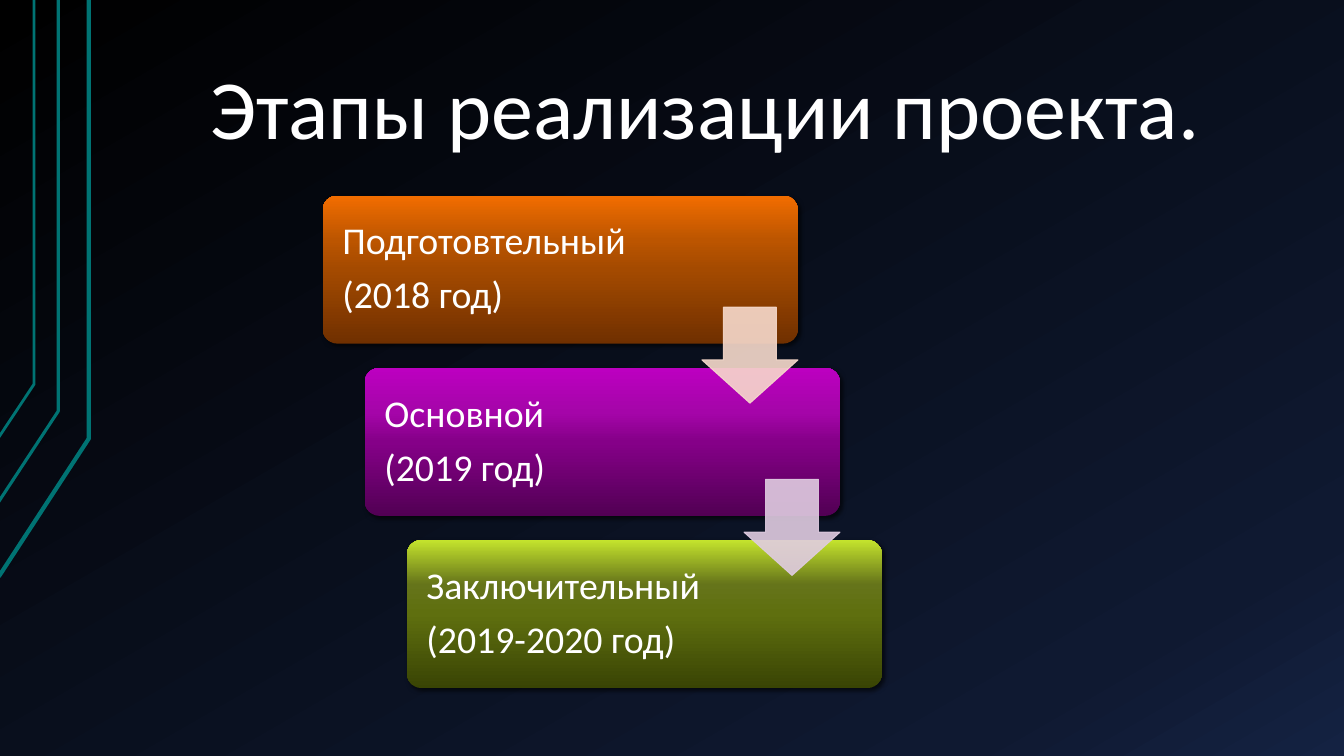
import pptx
import pptx.util
import pptx.dml.color
import pptx.enum.shapes
import pptx.enum.text
import pptx.oxml
import pptx.oxml.ns
from pptx.util import Cm

SHAPES = pptx.enum.shapes.MSO_SHAPE
ALIGN = pptx.enum.text.PP_ALIGN
ANCHOR = pptx.enum.text.MSO_ANCHOR
NAMESPACE = pptx.oxml.ns.nsdecls("a")
qn = pptx.oxml.ns.qn


def colour(code):
    return pptx.dml.color.RGBColor.from_string(code)


class StageSlide:
    font = "Calibri"
    text_colour = "FFFFFF"
    trace_colour = "007373"

    def __init__(self, slide):
        self.slide = slide

    def gradient(self, fill, owner, stops, angle):
        fill.gradient()
        fill.gradient_angle = angle
        stop_list = owner.find(".//" + qn("a:gsLst"))
        for stop in list(stop_list):
            stop_list.remove(stop)
        for position, code in stops:
            stop_list.append(pptx.oxml.parse_xml(
                f'<a:gs {NAMESPACE} pos="{position * 1000}">'
                f'<a:srgbClr val="{code}"/></a:gs>'))

    def background(self, stops, angle):
        self.gradient(self.slide.background.fill, self.slide.element, stops, angle)

    def style_text(self, paragraph, size, align):
        paragraph.alignment = align
        paragraph.line_spacing = 0.9
        paragraph.font.size = pptx.util.Pt(size)
        paragraph.font.name = self.font
        paragraph.font.color.rgb = colour(self.text_colour)

    def title(self, text, left, top, width, height):
        heading = self.slide.shapes.title
        heading.left, heading.top = Cm(left), Cm(top)
        heading.width, heading.height = Cm(width), Cm(height)
        frame = heading.text_frame
        frame.text = text
        frame.word_wrap = True
        frame.auto_size = pptx.enum.text.MSO_AUTO_SIZE.NONE
        frame.vertical_anchor = ANCHOR.BOTTOM
        frame.margin_left = frame.margin_right = Cm(0.33)
        frame.margin_top = frame.margin_bottom = Cm(0.18)
        self.style_text(frame.paragraphs[0], 60, ALIGN.CENTER)

    def trace(self, points, width):
        start, *rest = [(Cm(x), Cm(y)) for x, y in points]
        builder = self.slide.shapes.build_freeform(*start)
        builder.add_line_segments(rest, close=False)
        trace = builder.convert_to_shape()
        trace.shadow.inherit = False
        trace.fill.background()
        trace.line.color.rgb = colour(self.trace_colour)
        trace.line.width = pptx.util.Pt(width)

    def card(self, lines, stops, left, top, width, height):
        card = self.slide.shapes.add_shape(
            SHAPES.ROUNDED_RECTANGLE, Cm(left), Cm(top), Cm(width), Cm(height))
        card.adjustments[0] = 0.1
        self.gradient(card.fill, card.element, stops, 90)
        card.line.fill.background()
        card.shadow.inherit = False
        card.element.spPr.find(qn("a:effectLst")).append(pptx.oxml.parse_xml(
            f'<a:outerShdw {NAMESPACE} blurRad="38100" dist="25400" dir="2700000">'
            '<a:srgbClr val="000000"><a:alpha val="60000"/></a:srgbClr></a:outerShdw>'))
        frame = card.text_frame
        frame.text = "\n".join(lines)
        frame.word_wrap = True
        frame.vertical_anchor = ANCHOR.MIDDLE
        frame.margin_left = frame.margin_right = Cm(0.39)
        for paragraph in frame.paragraphs:
            self.style_text(paragraph, 27, ALIGN.LEFT)
            paragraph.space_after = pptx.util.Pt(9.45)

    def arrow(self, code, left, top, size):
        arrow = self.slide.shapes.add_shape(
            SHAPES.DOWN_ARROW, Cm(left), Cm(top), Cm(size), Cm(size))
        arrow.adjustments[0], arrow.adjustments[1] = 0.55, 0.45
        arrow.shadow.inherit = False
        arrow.fill.solid()
        arrow.fill.fore_color.rgb = colour(code)
        arrow.line.color.rgb = colour(code)
        arrow.line.width = pptx.util.Pt(0.75)
        for tint in arrow.element.spPr.iter(qn("a:srgbClr")):
            tint.append(pptx.oxml.parse_xml(f'<a:alpha {NAMESPACE} val="90000"/>'))


STAGES = [
    (("Подготовтельный", "(2018 год)"), ("703000", "A44A00", "BC5500", "F26D00")),
    (("Основной", "(2019 год)"), ("520054", "850088", "A505A9", "BC00C0")),
    (("Заключительный", "(2019-2020 год)"), ("394404", "5F6F0F", "65741A", "C4E32D")),
]
TRACES = [
    (-0.03, 14.53, 2.24, 11.05, 3),
    (-0.05, 12.67, 1.47, 10.36, 2.25),
    (-0.03, 11.02, 0.86, 9.68, 2),
]
ARROW_COLOURS = ["F7DACC", "E0CCE1"]
CARD_LEFT, CARD_TOP = 8.13, 4.93
STEP_X, STEP_Y = 1.06, 4.34


def main():
    deck = pptx.Presentation()
    deck.slide_width, deck.slide_height = Cm(33.87), Cm(19.05)
    stages = StageSlide(deck.slides.add_slide(deck.slide_layouts[5]))
    stages.background([(0, "000000"), (85, "0F1931"), (100, "142242")], 300)
    for edge_x, edge_y, bend_x, bend_y, width in TRACES:
        stages.trace([(edge_x, edge_y), (bend_x, bend_y), (bend_x, 0)], width)
    stages.title("Этапы реализации проекта.", 3.38, 0.76, 28.78, 3.4)
    for i, (lines, codes) in enumerate(STAGES):
        stages.card(lines, zip((0, 50, 70, 100), codes),
                    CARD_LEFT + i * STEP_X, CARD_TOP + i * STEP_Y, 11.98, 3.73)
    for i, code in enumerate(ARROW_COLOURS):
        stages.arrow(code, CARD_LEFT + 9.56 + i * STEP_X,
                     CARD_TOP + 2.81 + i * STEP_Y, 2.42)
    deck.save("out.pptx")


if __name__ == "__main__":
    main()
